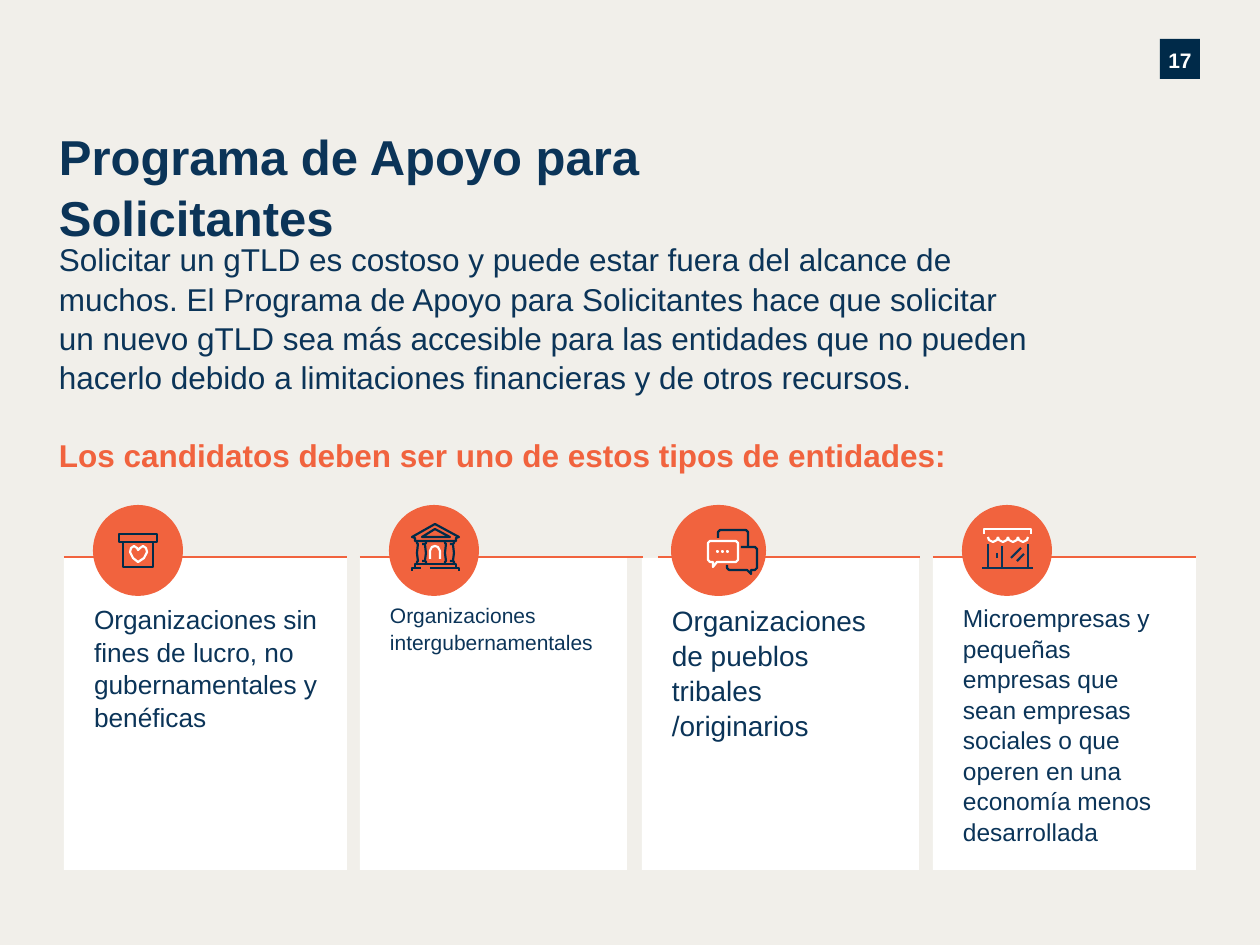
import pptx
import pptx.util
import pptx.dml.color
import pptx.enum.shapes
import pptx.enum.text
import pptx.oxml.ns
import lxml.etree

SCALE = 914400 / 126  # EMU in one px
COLORS = {"paper": "F1EFEA", "white": "FFFFFF", "orange": "F1633E",
          "text": "0B3458", "ink": "002B49", "badge": "002A49"}
SHAPES = pptx.enum.shapes.MSO_SHAPE
ANCHORS = pptx.enum.text.MSO_ANCHOR
ALIGNMENTS = pptx.enum.text.PP_ALIGN

presentation = pptx.Presentation()
presentation.slide_width = pptx.util.Emu(round(1260 * SCALE))
presentation.slide_height = pptx.util.Emu(round(945 * SCALE))
slide = presentation.slides.add_slide(presentation.slide_layouts[5])
slide.background.fill.solid()
slide.background.fill.fore_color.rgb = pptx.dml.color.RGBColor.from_string(COLORS["paper"])


def write(shape, lines, size, color="text", bold=False, insets=(0, 0, 0, 0),
          anchor=ANCHORS.TOP, alignment=ALIGNMENTS.LEFT, spacing=1.04):
    """Fill a shape with one paragraph per line; insets are left, top, right, bottom."""
    frame = shape.text_frame
    frame.word_wrap = True
    frame.auto_size = pptx.enum.text.MSO_AUTO_SIZE.NONE
    frame.vertical_anchor = anchor
    (frame.margin_left, frame.margin_top,
     frame.margin_right, frame.margin_bottom) = [round(inset * SCALE) for inset in insets]
    for index, line in enumerate(lines):
        paragraph = frame.add_paragraph() if index else frame.paragraphs[0]
        paragraph.alignment = alignment
        paragraph.line_spacing = spacing
        run = paragraph.add_run()
        run.text = line
        run.font.name = "Arial"
        run.font.size = pptx.util.Pt(size)
        run.font.bold = bold
        run.font.color.rgb = pptx.dml.color.RGBColor.from_string(COLORS[color])


def stroke(color, points, close=False):
    """Draw an unfilled path: a connector for two points, else a freeform."""
    if len(points) == 2:
        ends = [round(value * SCALE) for point in points for value in point]
        shape = slide.shapes.add_connector(
            pptx.enum.shapes.MSO_CONNECTOR.STRAIGHT, *ends)
        lxml.etree.SubElement(shape.element.spPr, pptx.oxml.ns.qn("a:effectLst"))
    else:
        builder = slide.shapes.build_freeform(*points[0], scale=SCALE)
        builder.add_line_segments(points[1:], close=close)
        shape = builder.convert_to_shape()
        shape.fill.background()
        shape.shadow.inherit = False
    shape.line.color.rgb = pptx.dml.color.RGBColor.from_string(COLORS[color])
    shape.line.width = pptx.util.Pt(1.25)


# Page number
badge = slide.shapes.add_shape(
    SHAPES.RECTANGLE, *[round(value * SCALE) for value in (1160, 39, 40, 40)])
badge.shadow.inherit = False
badge.fill.solid()
badge.fill.fore_color.rgb = pptx.dml.color.RGBColor.from_string(COLORS["badge"])
badge.line.fill.background()
write(badge, ["17"], 12, "white", True, anchor=ANCHORS.MIDDLE,
      alignment=ALIGNMENTS.CENTER, spacing=1.08)

# Heading and introduction
title = slide.shapes.title
title.left, title.top, title.width, title.height = [
    round(value * SCALE) for value in (59, 124, 693, 69)]
write(title, ["Programa de Apoyo para Solicitantes"], 28, bold=True)

introduction = slide.shapes.add_textbox(
    *[round(value * SCALE) for value in (59, 239, 971, 188)])
write(introduction, [
    "Solicitar un gTLD es costoso y puede estar fuera del alcance de muchos. "
    "El Programa de Apoyo para Solicitantes hace que solicitar un nuevo gTLD sea "
    "más accesible para las entidades que no pueden hacerlo debido a limitaciones "
    "financieras y de otros recursos."], 18)

subtitle = slide.shapes.add_textbox(
    *[round(value * SCALE) for value in (59, 435, 979, 54)])
write(subtitle, ["Los candidatos deben ser uno de estos tipos de entidades:"],
      18, "orange", True)

# Cards: left, width, text size, paragraphs
cards = [
    (64, 283, 15, ["Organizaciones sin fines de lucro, no gubernamentales y benéficas"]),
    (360, 267, 12, ["Organizaciones intergubernamentales"]),
    (642, 277, 16, ["Organizaciones", "de pueblos tribales /originarios"]),
    (933, 263, 14, ["Microempresas y pequeñas empresas que sean empresas sociales "
                    "o que operen en una economía menos desarrollada"]),
]
for left, width, size, lines in cards:
    card = slide.shapes.add_shape(
        SHAPES.RECTANGLE, *[round(value * SCALE) for value in (left, 558, width, 312)])
    card.shadow.inherit = False
    card.fill.solid()
    card.fill.fore_color.rgb = pptx.dml.color.RGBColor.from_string(COLORS["white"])
    card.line.fill.background()
    write(card, lines, size, insets=(30, 44, 20, 25))

for start, end in [(64, 347), (360, 643), (658, 920), (933, 1196)]:
    stroke("orange", [(start, 557), (end, 557)])

for left, width in [(93, 90), (389, 90), (671, 95), (962, 90)]:
    disc = slide.shapes.add_shape(
        SHAPES.OVAL, *[round(value * SCALE) for value in (left, 505, width, 91)])
    disc.shadow.inherit = False
    disc.fill.solid()
    disc.fill.fore_color.rgb = pptx.dml.color.RGBColor.from_string(COLORS["orange"])
    disc.line.fill.background()

# Donation box
stroke("ink", [(119, 534), (157, 534), (157, 542), (119, 542)], True)
stroke("ink", [(123, 542), (153, 542), (153, 567), (123, 567)], True)
stroke("white", [(138, 562), (133, 558), (130, 552), (131, 548), (134, 546), (137, 548),
                 (138, 550), (140, 548), (143, 546), (146, 548), (147, 552), (144, 558)], True)

# Public building
stroke("ink", [(430, 568), (459, 568), (459, 571)])
stroke("ink", [(412, 571), (412, 568), (421, 568)])
stroke("ink", [(415, 568), (415, 564), (456, 564), (456, 568)])
stroke("white", [(430, 559), (430, 551), (432, 547), (435, 546),
                 (438, 547), (440, 551), (440, 559)])
column = [
    [(425, 544), (426, 553), (425, 561)],
    [(422, 544), (425, 544), (426, 543), (426, 541)],
    [(422, 561), (425, 561), (426, 562), (426, 564)],
    [(417, 564), (417, 562), (418, 561), (417, 553), (418, 544), (417, 543), (417, 541)],
]
for shift in (0, 28):
    for points in column:
        stroke("ink", [(x + shift, y) for x, y in points])
stroke("ink", [(435, 529), (422, 537), (450, 537)], True)
stroke("ink", [(456, 541), (415, 541), (415, 538), (412, 537),
               (435, 524), (459, 537), (456, 538)], True)

# Speech bubbles
stroke("white", [(710, 541), (736, 541), (738, 543), (738, 560), (736, 562), (717, 562),
                 (713, 567), (713, 562), (710, 562), (708, 560), (708, 543)], True)
stroke("ink", [(727, 565), (727, 568), (729, 570), (747, 570), (751, 574), (751, 570),
               (755, 570), (757, 568), (757, 549), (755, 547), (741, 547)])
stroke("ink", [(718, 538), (718, 532), (720, 530), (746, 530), (748, 532), (748, 546)])
for left in (717, 722, 727):
    stroke("white", [(left, 551), (left + 1, 551), (left + 1, 552), (left, 552)], True)

# Shop
for left in range(988, 1028, 10):
    stroke("white", [(left, 537), (left + 1, 540), (left + 5, 542),
                     (left + 9, 540), (left + 10, 537)])
stroke("white", [(984, 534), (984, 529), (1031, 529), (1031, 534)])
for points in [
    [(988, 544), (988, 568)], [(1002, 546), (1002, 568)], [(1028, 544), (1028, 568)],
    [(997, 553), (997, 558)], [(982, 568), (1033, 568)],
    [(1021, 548), (1011, 558)], [(1024, 554), (1017, 561)],
]:
    stroke("text", points)

presentation.save("out.pptx")
